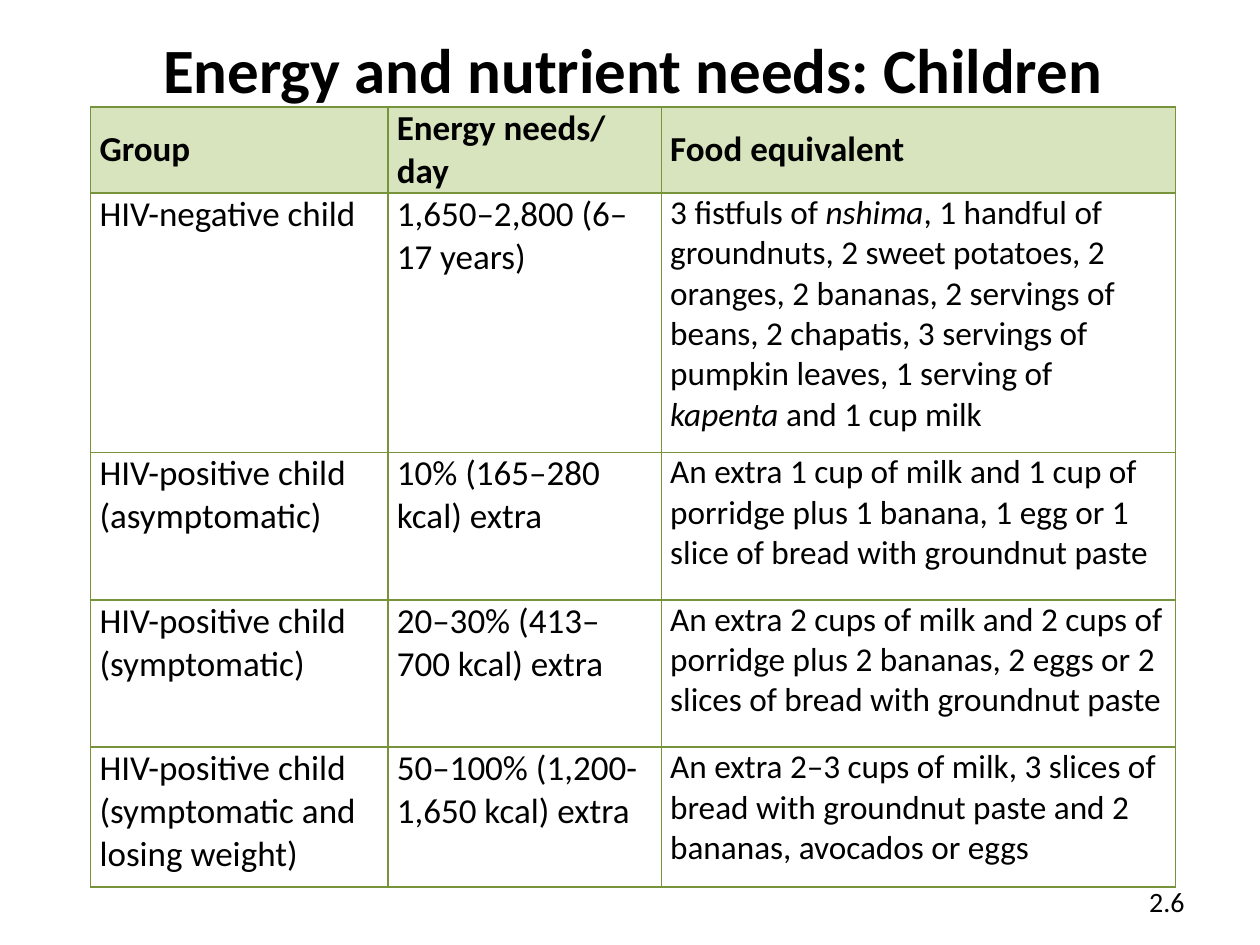
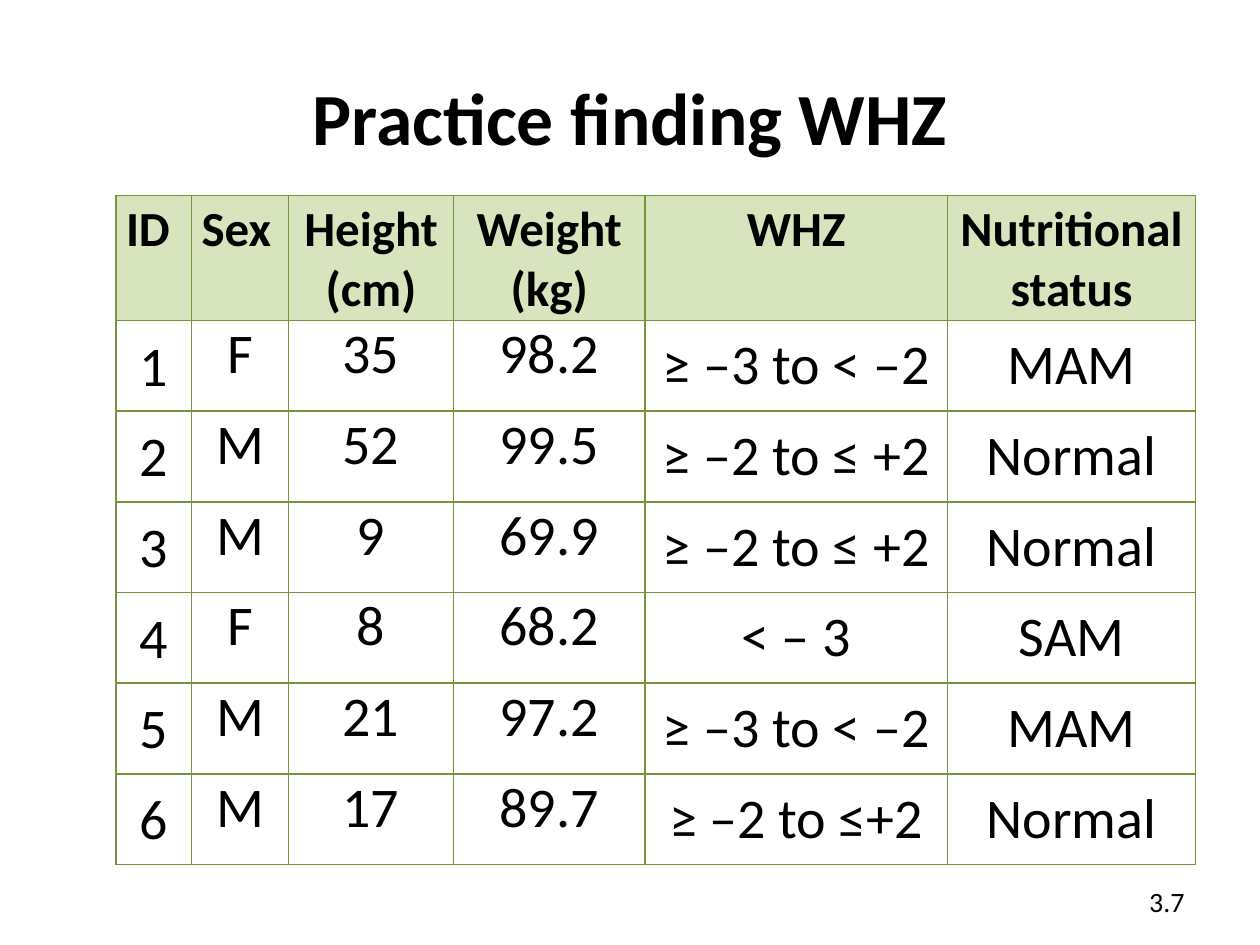
"""Build two nutrition training slides, each with a title, a table and a page number."""
import pptx
import pptx.dml.color
import pptx.enum.text
import pptx.oxml
import pptx.oxml.ns
import pptx.util

Inches, Pt = pptx.util.Inches, pptx.util.Pt
ALIGN = pptx.enum.text.PP_ALIGN
TOP, MIDDLE = pptx.enum.text.MSO_ANCHOR.TOP, pptx.enum.text.MSO_ANCHOR.MIDDLE

THEME = {
    "font": "Calibri", "text": "000000", "header": "D7E4BD", "border": "77933C",
    "border_width": 1, "page_size": 16,
    "slide": (10, 7.5), "page_box": (7.17, 6.95, 2.33, 0.4),
}
TIGHT = (0.07, 0, 0.07, 0)
ROOMY = (0.08, 0.04, 0.08, 0.02)


def look(size, align=ALIGN.LEFT, anchor=TOP, before=0, after=0, insets=TIGHT, bold=False):
    """Describe how the text of one cell is set."""
    return dict(size=size, align=align, anchor=anchor, before=before, after=after,
                insets=insets, bold=bold)


def needs_look(row, column):
    """Style the energy needs table, where the food column is smaller."""
    if row == 0:
        return look(20, anchor=MIDDLE, before=3, after=3, bold=True)
    if column == 2:
        return look(19)
    return look(20, before=0 if row == 2 else 3)


def practice_look(row, column):
    """Style the practice table, where measurements sit at the top of the cell."""
    if row == 0:
        return look(28, ALIGN.LEFT if column < 2 else ALIGN.CENTER,
                    MIDDLE if column in (2, 3) else TOP, 2, 2, ROOMY, True)
    if column == 0:
        return look(32, ALIGN.CENTER, MIDDLE, insets=ROOMY)
    return look(32, ALIGN.CENTER, TOP if column < 4 else MIDDLE, 2, 2)


SLIDES = [
    {
        "title": "Energy and nutrient needs: Children",
        "title_size": 36, "title_box": (0.02, -0.08, 10.01, 1.25), "page": "2.6",
        "origin": (0.72, 0.85), "look": needs_look,
        "columns": [2.36, 2.17, 4.08], "heights": [0.67, 2.06, 1.17, 1.17, 1.11],
        "rows": [
            ("Group", "Energy needs/ day", "Food equivalent"),
            ("HIV-negative child", "1,650–2,800 (6–17 years)",
             "3 fistfuls of *nshima*, 1 handful of groundnuts, 2 sweet potatoes, "
             "2 oranges, 2 bananas, 2 servings of beans, 2 chapatis, 3 servings of "
             "pumpkin leaves, 1 serving of *kapenta *and 1 cup milk"),
            ("HIV-positive child (asymptomatic)", "10% (165–280 kcal) extra",
             "An extra 1 cup of milk and 1 cup of porridge plus 1 banana, 1 egg or "
             "1 slice of bread with groundnut paste"),
            ("HIV-positive child (symptomatic)", "20–30% (413–700 kcal) extra",
             "An extra 2 cups of milk and 2 cups of porridge plus 2 bananas, 2 eggs or "
             "2 slices of bread with groundnut paste"),
            ("HIV-positive child (symptomatic and losing weight)",
             "50–100% (1,200-1,650 kcal) extra",
             "An extra 2–3 cups of milk, 3 slices of bread with groundnut paste and "
             "2 bananas, avocados or eggs"),
        ],
    },
    {
        "title": "Practice finding WHZ",
        "title_size": 42, "title_box": (0, 0.3, 10, 1.25), "page": "3.7",
        "origin": (0.92, 1.55), "look": practice_look,
        "columns": [0.6, 0.77, 1.31, 1.52, 2.4, 1.97], "heights": [0.99] + [0.72] * 6,
        "rows": [
            ("ID", "Sex", "Height (cm)", "Weight (kg)", "WHZ", "Nutritional status"),
            ("1", "F", "35", "98.2", "≥ –3 to < –2", "MAM"),
            ("2", "M", "52", "99.5", "≥ –2 to ≤ +2", "Normal"),
            ("3", "M", "9", "69.9", "≥ –2 to ≤ +2", "Normal"),
            ("4", "F", "8", "68.2", "< – 3", "SAM"),
            ("5", "M", "21", "97.2", "≥ –3 to < –2", "MAM"),
            ("6", "M", "17", "89.7", "≥ –2 to ≤+2", "Normal"),
        ],
    },
]


def color(name):
    return pptx.dml.color.RGBColor.from_string(THEME[name])


def write(paragraph, words, size, align, bold=False):
    """Write words into a paragraph; parts between asterisks are italic."""
    paragraph.alignment = align
    for index, part in enumerate(words.split("*")):
        run = paragraph.add_run()
        run.text = part
        run.font.name = THEME["font"]
        run.font.size = Pt(size)
        run.font.bold = bold
        run.font.italic = index % 2 == 1
        run.font.color.rgb = color("text")


def add_label(slide, box, words, size, align, bold=False):
    frame = slide.shapes.add_textbox(*map(Inches, box)).text_frame
    frame.word_wrap = True
    frame.vertical_anchor = MIDDLE
    write(frame.paragraphs[0], words, size, align, bold)


def add_borders(cell):
    properties = cell._tc.get_or_add_tcPr()
    for side in ("lnL", "lnR", "lnT", "lnB"):
        properties.append(pptx.oxml.parse_xml(
            f'<a:{side} {pptx.oxml.ns.nsdecls("a")} w="{Pt(THEME["border_width"])}">'
            f'<a:solidFill><a:srgbClr val="{THEME["border"]}"/></a:solidFill></a:{side}>'))


def fill_cell(cell, words, style, is_header):
    left, top, right, bottom = map(Inches, style["insets"])
    cell.margin_left, cell.margin_top = left, top
    cell.margin_right, cell.margin_bottom = right, bottom
    cell.vertical_anchor = style["anchor"]
    paragraph = cell.text_frame.paragraphs[0]
    paragraph.space_before = Pt(style["before"])
    paragraph.space_after = Pt(style["after"])
    write(paragraph, words, style["size"], style["align"], style["bold"])
    add_borders(cell)
    if is_header:
        cell.fill.solid()
        cell.fill.fore_color.rgb = color("header")
    else:
        cell.fill.background()


def add_grid(slide, content):
    columns, heights = content["columns"], content["heights"]
    box = (*content["origin"], sum(columns), sum(heights))
    grid = slide.shapes.add_table(len(heights), len(columns), *map(Inches, box)).table
    grid.first_row = grid.horz_banding = False
    for column, width in zip(grid.columns, columns):
        column.width = Inches(width)
    for row, height in zip(grid.rows, heights):
        row.height = Inches(height)
    for r, row in enumerate(content["rows"]):
        for c, words in enumerate(row):
            fill_cell(grid.cell(r, c), words, content["look"](r, c), r == 0)


def main():
    deck = pptx.Presentation()
    deck.slide_width, deck.slide_height = map(Inches, THEME["slide"])
    for content in SLIDES:
        slide = deck.slides.add_slide(deck.slide_layouts[6])
        add_grid(slide, content)
        add_label(slide, content["title_box"], content["title"], content["title_size"],
                  ALIGN.CENTER, bold=True)
        add_label(slide, THEME["page_box"], content["page"], THEME["page_size"], ALIGN.RIGHT)
    deck.save("out.pptx")


if __name__ == "__main__":
    main()
